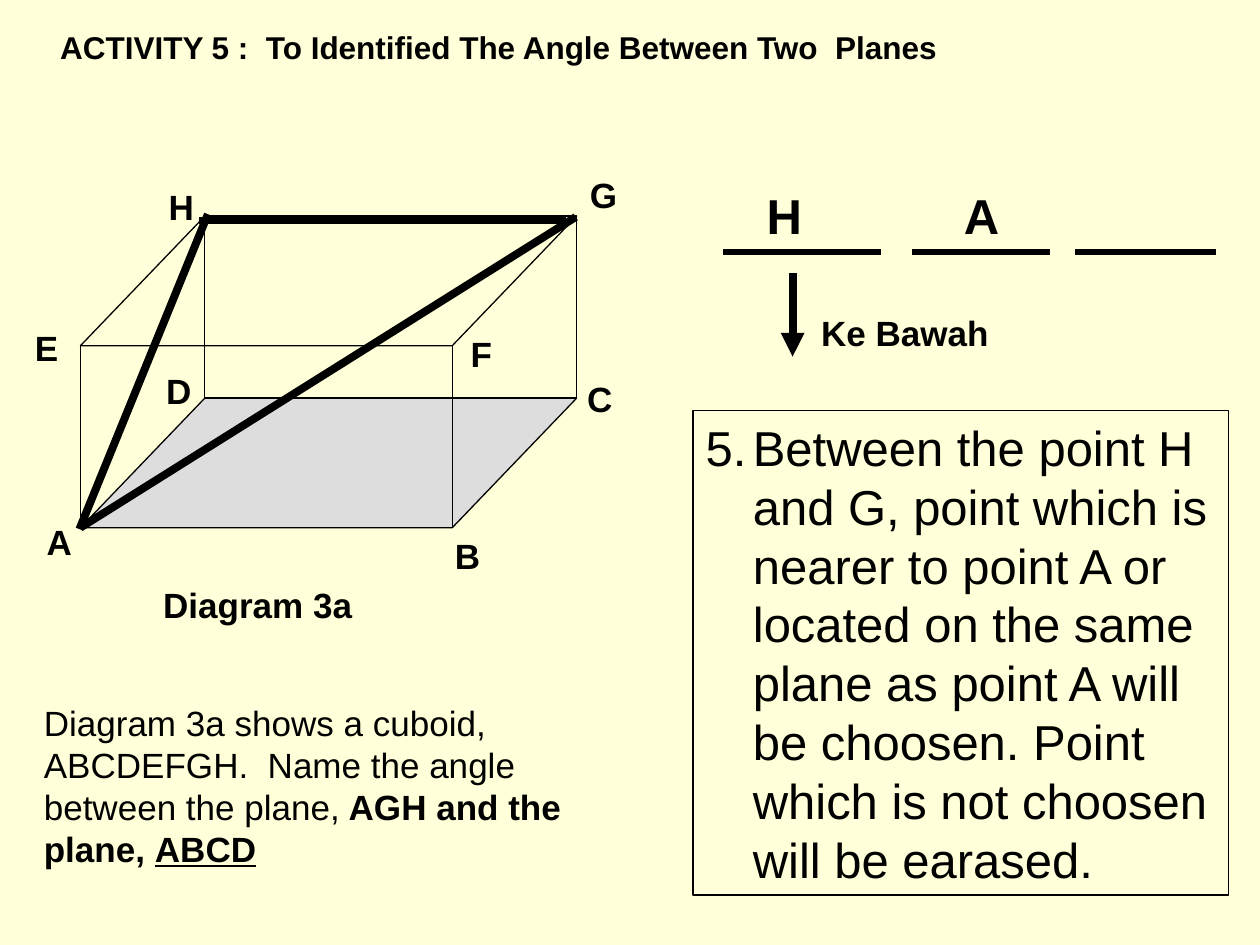
from lxml import etree
from pptx import Presentation
from pptx.dml.color import RGBColor
from pptx.enum.shapes import MSO_CONNECTOR, MSO_SHAPE
from pptx.enum.text import MSO_ANCHOR, MSO_AUTO_SIZE, PP_ALIGN
from pptx.oxml.ns import qn
from pptx.util import Pt

STRAIGHT = MSO_CONNECTOR.STRAIGHT
RECTANGLE, PARALLELOGRAM = MSO_SHAPE.RECTANGLE, MSO_SHAPE.PARALLELOGRAM
LEFT, CENTER = PP_ALIGN.LEFT, PP_ALIGN.CENTER
TOP, MIDDLE = MSO_ANCHOR.TOP, MSO_ANCHOR.MIDDLE

COLORS = {"background": "FFFFD9", "ink": "000000", "base": "DDDDDD"}
FONT = "Arial"

# Content: text and places in points
TITLE = "ACTIVITY 5 :  To Identified The Angle Between Two  Planes"
STEP_NUMBER = 5
STEP = ("Between the point H and G, point which is nearer to point A or located "
        "on the same plane as point A will be choosen. Point which is not "
        "choosen will be earased.")
QUESTION = [  # text, bold, underlined
    ("Diagram 3a shows a cuboid, ABCDEFGH.  Name the angle between the plane,", False, False),
    (" AGH and the plane, ", True, False),
    ("ABCD", True, True),
]
VERTEX_LABELS = {
    "A": (7.2, 293.8), "B": (240.5, 301.7), "C": (316.1, 212.4), "D": (75.6, 207.4),
    "E": (0, 182.9), "F": (248.4, 186.5), "G": (318.2, 95.8), "H": (77, 102.2),
}
LABEL_SIZE = (53.3, 29.5)
CAPTIONS = [  # text, area, size, alignment
    ("Diagram 3a", (49, 329.8, 196.6, 36), 20, CENTER),
    ("H", (415, 102.2, 66.2, 29.5), 28, CENTER),
    ("A", (534.2, 102.2, 53.3, 29.5), 28, CENTER),
    ("Ke Bawah", (462.2, 174.2, 131.8, 31), 20, LEFT),
]
BLANKS = [(413.3, 503.3), (521.3, 599.8), (614.2, 694.8)]
BLANK_Y = 144

# Cuboid: front lower left corner, edges and slant
FRONT_X, FRONT_BOTTOM = 46, 301.5
WIDTH, HEIGHT = 212.5, 104
SLANT_X, SLANT_Y = 71, 74
FRONT_TOP = FRONT_BOTTOM - HEIGHT
PLANE_EDGES = [((329, 124), (46, 301.5)), ((118.8, 122.4), (45.4, 302.4)),
               ((113.8, 126), (323.3, 126))]

deck = Presentation()
deck.slide_width, deck.slide_height = Pt(720), Pt(540)
page = deck.slides.add_slide(deck.slide_layouts[1])


def rgb(name):
    return RGBColor.from_string(COLORS[name])


def place(shape, area):
    shape.left, shape.top, shape.width, shape.height = [Pt(value) for value in area]


def format_span(span, size, bold=False, underline=False):
    span.font.name, span.font.size = FONT, Pt(size)
    span.font.bold, span.font.underline = bold, underline
    span.font.color.rgb = rgb("ink")


def format_box(box, size, bold, align, anchor=TOP):
    frame = box.text_frame
    frame.word_wrap, frame.auto_size = True, MSO_AUTO_SIZE.NONE
    frame.vertical_anchor = anchor
    para = frame.paragraphs[0]
    para.alignment, para.space_before, para.line_spacing = align, Pt(0), 1.0
    for span in para.runs:
        format_span(span, size, bold)
    return para


def add_label(text, area, size, align):
    box = page.shapes.add_textbox(*[Pt(value) for value in area])
    box.text_frame.text = text
    format_box(box, size, True, align)


def add_face(kind, area, fill=None):
    face = page.shapes.add_shape(kind, *[Pt(value) for value in area])
    face.shadow.inherit = False
    if kind == PARALLELOGRAM:
        face.adjustments[0] = SLANT_X / SLANT_Y
    if fill:
        face.fill.solid()
        face.fill.fore_color.rgb = rgb(fill)
    else:
        face.fill.background()
    face.line.color.rgb, face.line.width = rgb("ink"), Pt(0.75)


def add_line(start, end, width, arrow=False):
    line = page.shapes.add_connector(STRAIGHT, *[Pt(value) for value in start + end])
    line.line.color.rgb, line.line.width = rgb("ink"), Pt(width)
    if arrow:
        etree.SubElement(line.line._get_or_add_ln(), qn("a:tailEnd"), type="triangle")
    etree.SubElement(line._element.spPr, qn("a:effectLst"))


page.background.fill.solid()
page.background.fill.fore_color.rgb = rgb("background")

# Title
title = page.shapes.title
place(title, (12.2, 12.2, 545.8, 28.8))
title.text_frame.text = TITLE
format_box(title, 18, True, CENTER)

# Cuboid, back to front
slanted = WIDTH + SLANT_X
add_face(PARALLELOGRAM, (FRONT_X, FRONT_TOP - SLANT_Y, slanted, SLANT_Y))
add_face(RECTANGLE, (FRONT_X + SLANT_X, FRONT_TOP - SLANT_Y, WIDTH, HEIGHT))
add_face(PARALLELOGRAM, (FRONT_X, FRONT_BOTTOM - SLANT_Y, slanted, SLANT_Y), "base")
add_face(RECTANGLE, (FRONT_X, FRONT_TOP, WIDTH, HEIGHT))
for start, end in PLANE_EDGES:
    add_line(start, end, 4.5)
for letter, corner in VERTEX_LABELS.items():
    add_label(letter, corner + LABEL_SIZE, 20, CENTER)

# Answer blanks and arrow
for left, right in BLANKS:
    add_line((left, BLANK_Y), (right, BLANK_Y), 3)
add_line((452.9, 156.2), (452.9, 203.8), 4.5, arrow=True)
for caption in CAPTIONS:
    add_label(*caption)

# Numbered step
step = page.placeholders[1]
place(step, (396, 234.5, 306, 277))
step.line.color.rgb, step.line.width = rgb("ink"), Pt(0.75)
step.text_frame.text = STEP
para = step.text_frame.paragraphs[0]
properties = para._p.get_or_add_pPr()
properties.set("marL", str(Pt(27)))
properties.set("indent", str(-Pt(27)))
etree.SubElement(properties, qn("a:buFont"), typeface=FONT)
etree.SubElement(properties, qn("a:buAutoNum"), type="arabicPeriod", startAt=str(STEP_NUMBER))
format_box(step, 28, False, LEFT, MIDDLE)

# Question
question = page.shapes.add_textbox(Pt(18), Pt(397.4), Pt(311.8), Pt(103))
para = format_box(question, 20, False, LEFT, MIDDLE)
for text, bold, underline in QUESTION:
    span = para.add_run()
    span.text = text
    format_span(span, 20, bold, underline)

deck.save("out.pptx")
